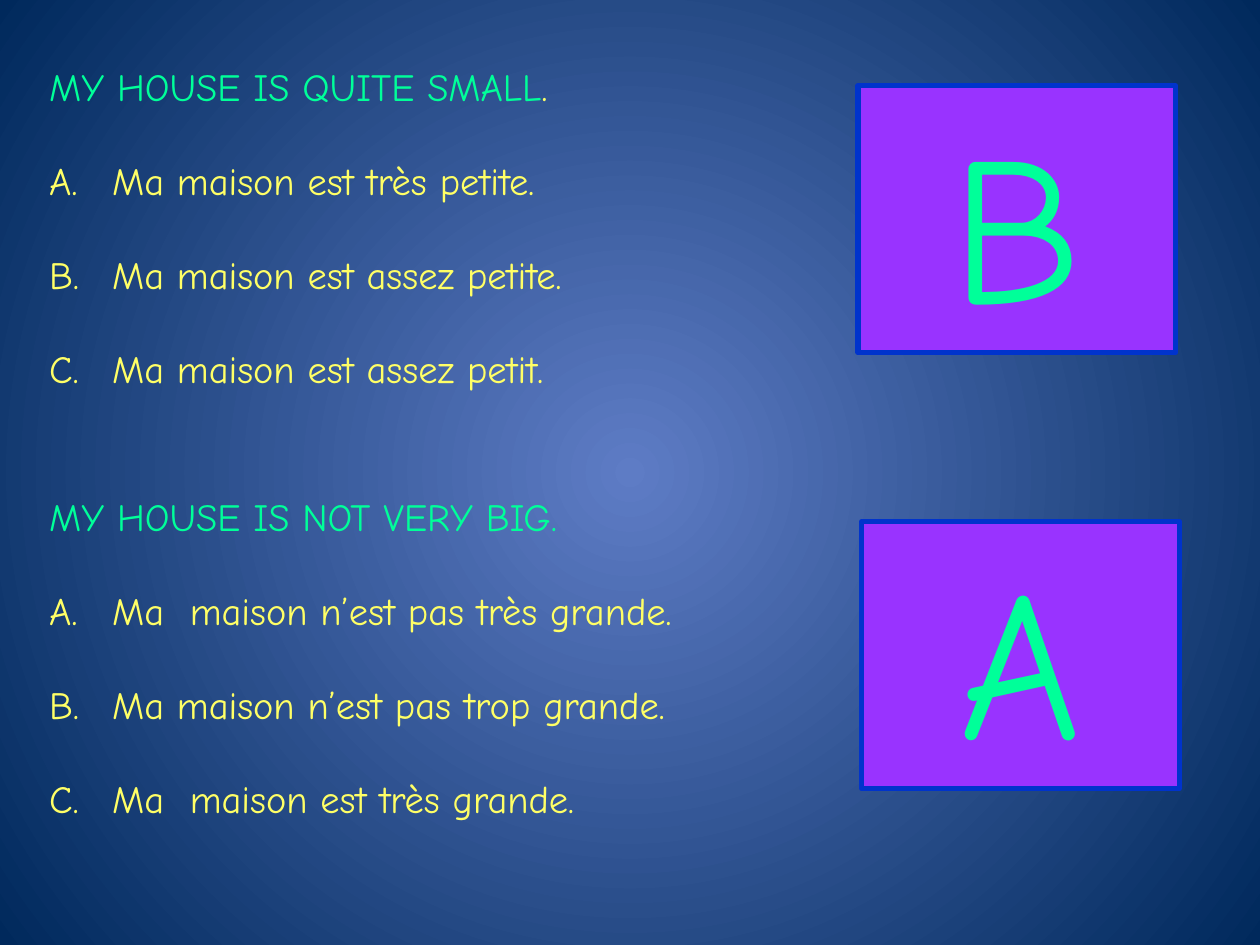
from pptx import Presentation
from pptx.dml.color import RGBColor
from pptx.enum.shapes import MSO_SHAPE
from pptx.enum.text import MSO_ANCHOR, PP_ALIGN
from pptx.oxml.ns import qn
from pptx.util import Inches, Pt
from lxml.etree import SubElement

COLORS = {
    "centre": "5E7CC5",
    "edge": "00295C",
    "mint": "00FF99",
    "yellow": "FFFF66",
    "purple": "9933FF",
    "blue": "0033CC",
}
QUESTIONS = [
    {
        "heading": [("MY HOUSE IS QUITE SMALL", "mint"), (".", "yellow")],
        "options": [
            "Ma maison est très petite.",
            "Ma maison est assez petite.",
            "Ma maison est assez petit.",
        ],
        "box": (0.29, 0.45, 6.51, 3.06),
        "answer": "B",
        "card": (6.81, 0.68, 2.52, 2.12),
    },
    {
        "heading": [("MY HOUSE IS NOT VERY BIG.", "mint")],
        "options": [
            "Ma  maison n’est pas très grande.",
            "Ma maison n’est pas trop grande.",
            "Ma  maison est très grande.",
        ],
        "box": (0.29, 3.86, 6.84, 3.06),
        "answer": "A",
        "card": (6.84, 4.14, 2.52, 2.12),
    },
]


def rgb(name):
    return RGBColor.from_string(COLORS[name])


class QuizSlide:
    font = "Comic Neue"
    text_size = Pt(22)
    answer_size = Pt(120)
    para = {"alignment": PP_ALIGN.LEFT, "line_spacing": 1.0, "space_after": Pt(0)}
    frame = {"word_wrap": True, "vertical_anchor": MSO_ANCHOR.TOP}

    def __init__(self, prs):
        self.slide = prs.slides.add_slide(prs.slide_layouts[3])
        title = self.slide.shapes.title._element
        title.getparent().remove(title)
        self.bodies = list(self.slide.placeholders)

    def apply(self, target, values):
        for name, value in values.items():
            setattr(target, name, value)

    def background(self, centre, edge):
        fill = self.slide.background.fill
        fill.gradient()
        for stop, name, pos in zip(fill.gradient_stops, (centre, edge), (0, 1)):
            stop.color.rgb = rgb(name)
            stop.position = pos
        lin = next(self.slide._element.iter(qn("a:lin")))
        grad = lin.getparent()
        grad.remove(lin)
        focus = SubElement(grad, qn("a:path"), path="circle")
        SubElement(focus, qn("a:fillToRect"), l="50000", t="50000", r="50000", b="50000")

    def run(self, p, text, color, size):
        r = p.add_run()
        r.text = text
        self.apply(r.font, {"name": self.font, "size": size, "bold": False})
        r.font.color.rgb = rgb(color)

    def paragraph(self, p, runs, gap, numbered):
        self.apply(p, {**self.para, "space_before": Pt(gap)})
        pPr = p._p.get_or_add_pPr()
        indent = Inches(0.5) if numbered else 0
        pPr.set("marL", str(indent))
        pPr.set("indent", str(-indent))
        if numbered:
            SubElement(pPr, qn("a:buFont"), typeface=self.font)
            SubElement(pPr, qn("a:buAutoNum"), type="alphaUcPeriod")
        else:
            SubElement(pPr, qn("a:buNone"))
        for text, color in runs:
            self.run(p, text, color, self.text_size)

    def question(self, index, heading, options, box):
        sp = self.bodies[index]
        places = map(Inches, box)
        self.apply(sp, dict(zip(("left", "top", "width", "height"), places)))
        tf = sp.text_frame
        self.apply(tf, self.frame)
        self.paragraph(tf.paragraphs[0], heading, 0, False)
        for option in options:
            self.paragraph(tf.add_paragraph(), [(option, "yellow")], 27.4, True)

    def answer_card(self, letter, card):
        sp = self.slide.shapes.add_shape(MSO_SHAPE.RECTANGLE, *map(Inches, card))
        sp.shadow.inherit = False
        sp.fill.solid()
        sp.fill.fore_color.rgb = rgb("purple")
        sp.line.color.rgb = rgb("blue")
        sp.line.width = Pt(3)
        tf = sp.text_frame
        self.apply(tf, {"word_wrap": True, "vertical_anchor": MSO_ANCHOR.MIDDLE})
        p = tf.paragraphs[0]
        p.alignment = PP_ALIGN.CENTER
        self.run(p, letter, "mint", self.answer_size)


def main():
    prs = Presentation()
    prs.slide_width, prs.slide_height = Inches(10), Inches(7.5)
    quiz = QuizSlide(prs)
    quiz.background("centre", "edge")
    for i, q in enumerate(QUESTIONS):
        quiz.question(i, q["heading"], q["options"], q["box"])
        quiz.answer_card(q["answer"], q["card"])
    prs.save("out.pptx")


if __name__ == "__main__":
    main()
